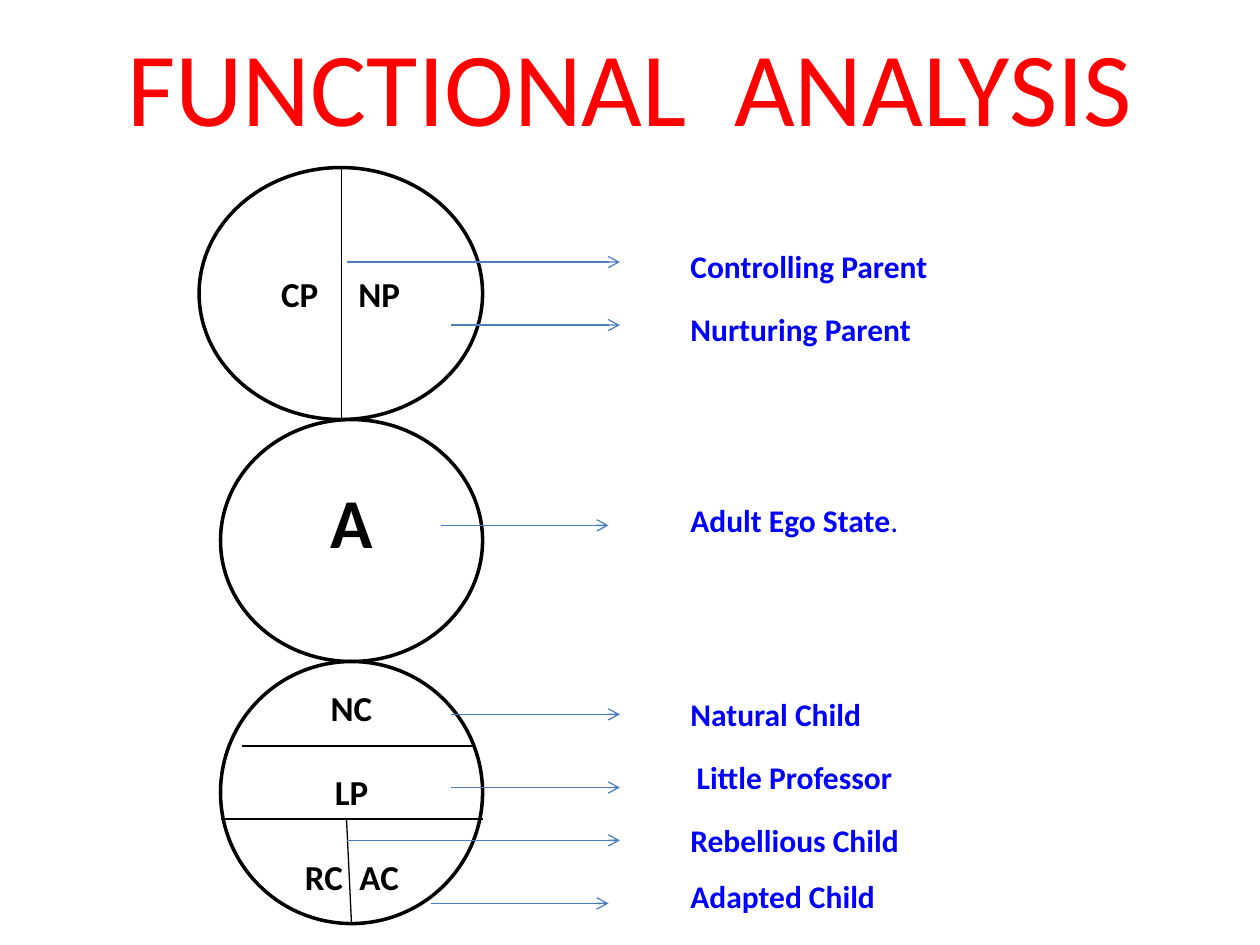
from typing import NamedTuple

from lxml import etree
from pptx import Presentation
from pptx.dml.color import RGBColor
from pptx.enum import shapes, text
from pptx.oxml import ns
from pptx.util import Inches, Pt

BLACK = RGBColor(0, 0, 0)
WHITE = RGBColor(255, 255, 255)
RED = RGBColor(255, 0, 0)
BLUE = RGBColor(0, 0, 255)
STEEL = RGBColor(0x4B, 0x7E, 0xBC)
FONT = "Calibri"
LEFT, CENTER = text.PP_ALIGN.LEFT, text.PP_ALIGN.CENTER


class Circle(NamedTuple):
    x: float
    y: float
    w: float
    h: float
    lines: tuple[str, ...] = ()
    size: int = 20
    bottom: float = 0.05


class Label(NamedTuple):
    text: str
    x: float
    y: float
    w: float
    h: float = 0.4
    size: int = 18
    color: RGBColor = BLUE
    align: text.PP_ALIGN = LEFT
    bold: bool = True
    end: str = ""


class Line(NamedTuple):
    x1: float
    y1: float
    x2: float
    y2: float


def style(p, size: int, color: RGBColor, align, bold: bool = True) -> None:
    p.alignment = align
    p.font.name = FONT
    p.font.size = Pt(size)
    p.font.color.rgb = color
    p.font.bold = bold


def draw_circle(s, c: Circle) -> None:
    sp = s.shapes.add_shape(shapes.MSO_SHAPE.OVAL, Inches(c.x), Inches(c.y),
                            Inches(c.w), Inches(c.h))
    sp.shadow.inherit = False
    sp.fill.solid()
    sp.fill.fore_color.rgb = WHITE
    sp.line.color.rgb = BLACK
    sp.line.width = Pt(2)
    tf = sp.text_frame
    tf.vertical_anchor = text.MSO_ANCHOR.MIDDLE
    tf.margin_bottom = Inches(c.bottom)
    for i, line in enumerate(c.lines):
        p = tf.add_paragraph() if i else tf.paragraphs[0]
        p.text = line
        p.space_before = Pt(24 if i else 0)
        style(p, c.size, BLACK, CENTER)


def draw_label(s, lb: Label) -> None:
    left = lb.x - lb.w / 2 if lb.align == CENTER else lb.x
    sp = s.shapes.add_textbox(Inches(left), Inches(lb.y - lb.h / 2),
                              Inches(lb.w), Inches(lb.h))
    tf = sp.text_frame
    tf.word_wrap = True
    tf.vertical_anchor = text.MSO_ANCHOR.MIDDLE
    tf.margin_left = tf.margin_right = tf.margin_top = tf.margin_bottom = 0
    p = tf.paragraphs[0]
    p.text = lb.text
    style(p, lb.size, lb.color, lb.align, lb.bold)
    if lb.end:
        r = p.add_run()
        r.text = lb.end
        r.font.bold = False


def draw_line(s, ln: Line, color: RGBColor, arrow: bool = False) -> None:
    cx = s.shapes.add_connector(shapes.MSO_CONNECTOR.STRAIGHT,
                                Inches(ln.x1), Inches(ln.y1),
                                Inches(ln.x2), Inches(ln.y2))
    cx.line.color.rgb = color
    cx.line.width = Pt(0.75)
    if arrow:
        etree.SubElement(cx.line._get_or_add_ln(), ns.qn("a:tailEnd"), type="arrow")
    etree.SubElement(cx._element.spPr, ns.qn("a:effectLst"))


def sector(name: str, x: float, y: float) -> Label:
    return Label(name, x, y, 0.5, size=20, color=BLACK, align=CENTER)


def meaning(name: str, y: float, x: float = 5.48, end: str = "") -> Label:
    return Label(name, x, y, 3.5, end=end)


TITLE = Label("FUNCTIONAL  ANALYSIS", 5, 0.67, 9, 1, 60, RED, CENTER, False)
CIRCLES = [
    Circle(1.58, 1.33, 2.25, 2),
    Circle(1.75, 3.33, 2.08, 1.92, ("A",), 40, 0.36),
    Circle(1.75, 5.25, 2.08, 2.08, ("NC", "LP"), 20, 0.73),
]
DIVIDERS = [
    Line(2.71, 1.33, 2.71, 3.33),
    Line(3.75, 5.92, 1.92, 5.92),
    Line(3.83, 6.5, 1.75, 6.5),
    Line(2.75, 6.5, 2.79, 7.33),
]
SECTORS = [
    sector("CP", 2.38, 2.33),
    sector("NP", 3.01, 2.33),
    sector("RC", 2.57, 6.96),
    sector("AC", 3.01, 6.96),
]
ARROWS = [
    Line(2.75, 2.08, 4.92, 2.08),
    Line(3.58, 2.58, 4.92, 2.58),
    Line(3.5, 4.17, 4.83, 4.17),
    Line(3.58, 5.67, 4.92, 5.67),
    Line(3.58, 6.25, 4.92, 6.25),
    Line(2.75, 6.67, 4.92, 6.67),
    Line(3.42, 7.17, 4.83, 7.17),
]
MEANINGS = [
    meaning("Controlling Parent", 2.11),
    meaning("Nurturing Parent", 2.61),
    meaning("Adult Ego State", 4.13, end="."),
    meaning("Natural Child", 5.67),
    meaning("Little Professor", 6.17, 5.53),
    meaning("Rebellious Child", 6.67),
    meaning("Adapted Child", 7.11),
]


def main() -> None:
    prs = Presentation()
    prs.slide_width, prs.slide_height = Inches(10), Inches(7.5)
    s = prs.slides.add_slide(prs.slide_layouts[6])
    for circle in CIRCLES:
        draw_circle(s, circle)
    for divider in DIVIDERS:
        draw_line(s, divider, BLACK)
    for arrow in ARROWS:
        draw_line(s, arrow, STEEL, arrow=True)
    for label in [TITLE, *SECTORS, *MEANINGS]:
        draw_label(s, label)
    prs.save("out.pptx")


if __name__ == "__main__":
    main()
